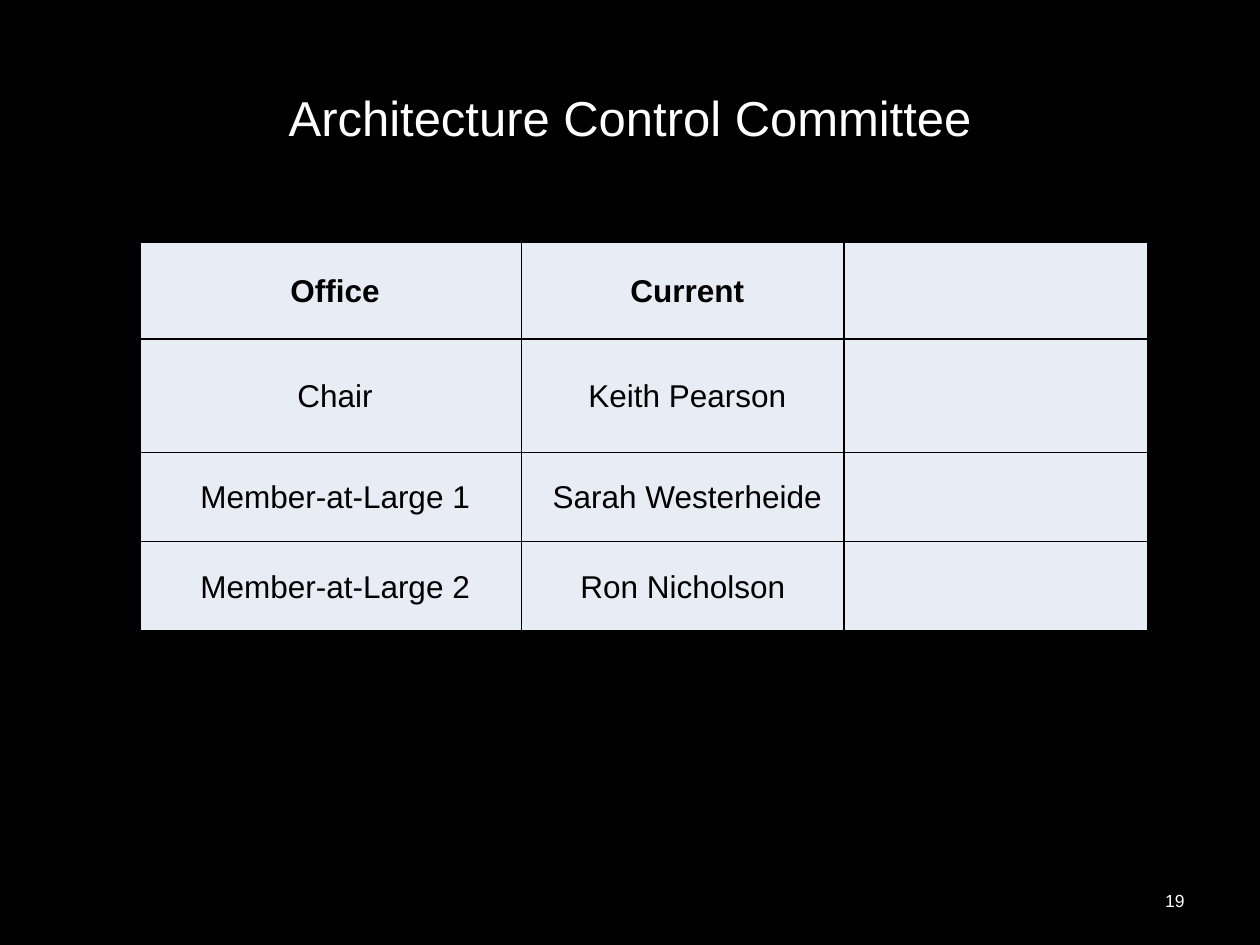
import pptx
import pptx.dml.color
import pptx.enum.text
import pptx.util
from lxml import etree
from pptx.util import Inches

COLORS = {"background": "000000", "light": "FFFFFF", "ink": "000000",
          "cell": "E8ECF4", "border": "000000"}
DRAWING_NS = "http://schemas.openxmlformats.org/drawingml/2006/main"
ALIGN = pptx.enum.text.PP_ALIGN
MIDDLE = pptx.enum.text.MSO_ANCHOR.MIDDLE


def rgb(name):
    return pptx.dml.color.RGBColor.from_string(COLORS[name])


def write(frame, text, size, color, align, bold=False):
    """Put one Arial run into the first paragraph of a text frame."""
    paragraph = frame.paragraphs[0]
    paragraph.alignment = align
    run = paragraph.add_run()
    run.text = text
    run.font.name = "Arial"
    run.font.size = pptx.util.Pt(size)
    run.font.bold = bold
    run.font.color.rgb = rgb(color)


deck = pptx.Presentation()
deck.slide_width = Inches(10)
deck.slide_height = Inches(7.5)
slide = deck.slides.add_slide(deck.slide_layouts[6])
slide.background.fill.solid()
slide.background.fill.fore_color.rgb = rgb("background")

# Title and page number
for text, box, size, align in [
    ("Architecture Control Committee", (0.5, 0.3, 9, 1.25), 28, ALIGN.CENTER),
    ("19", (7.17, 6.95, 2.33, 0.4), 10, ALIGN.RIGHT),
]:
    frame = slide.shapes.add_textbox(*map(Inches, box)).text_frame
    frame.word_wrap = True
    frame.vertical_anchor = MIDDLE
    write(frame, text, size, "light", align)

# Committee members; the last column stays empty
members = [
    (" Office", " Current", ""),
    (" Chair", " Keith Pearson", ""),
    (" Member-at-Large 1", " Sarah Westerheide", ""),
    (" Member-at-Large 2", "Ron Nicholson", ""),
]
column_widths = [3.03, 2.56, 2.41]
row_heights = [0.77, 0.9, 0.71, 0.71]

committee = slide.shapes.add_table(
    len(members), len(column_widths), Inches(1.11), Inches(1.92),
    Inches(sum(column_widths)), Inches(sum(row_heights))).table
for column, width in zip(committee.columns, column_widths):
    column.width = Inches(width)
for row, height in zip(committee.rows, row_heights):
    row.height = Inches(height)

for row_index, member in enumerate(members):
    for column_index, text in enumerate(member):
        cell = committee.cell(row_index, column_index)
        if text:
            cell.margin_left = cell.margin_right = cell.margin_top = Inches(0.01)
            cell.margin_bottom = 0
            cell.vertical_anchor = MIDDLE
            write(cell.text_frame, text, 18, "ink", ALIGN.CENTER,
                  bold=row_index == 0)
        # Borders must precede the fill in the cell properties
        properties = cell._tc.get_or_add_tcPr()
        for side in ("lnL", "lnR", "lnT", "lnB"):
            line = etree.SubElement(properties, f"{{{DRAWING_NS}}}{side}",
                                    w=str(pptx.util.Pt(1)))
            solid = etree.SubElement(line, f"{{{DRAWING_NS}}}solidFill")
            etree.SubElement(solid, f"{{{DRAWING_NS}}}srgbClr",
                             val=COLORS["border"])
        cell.fill.solid()
        cell.fill.fore_color.rgb = rgb("cell")

deck.save("out.pptx")
